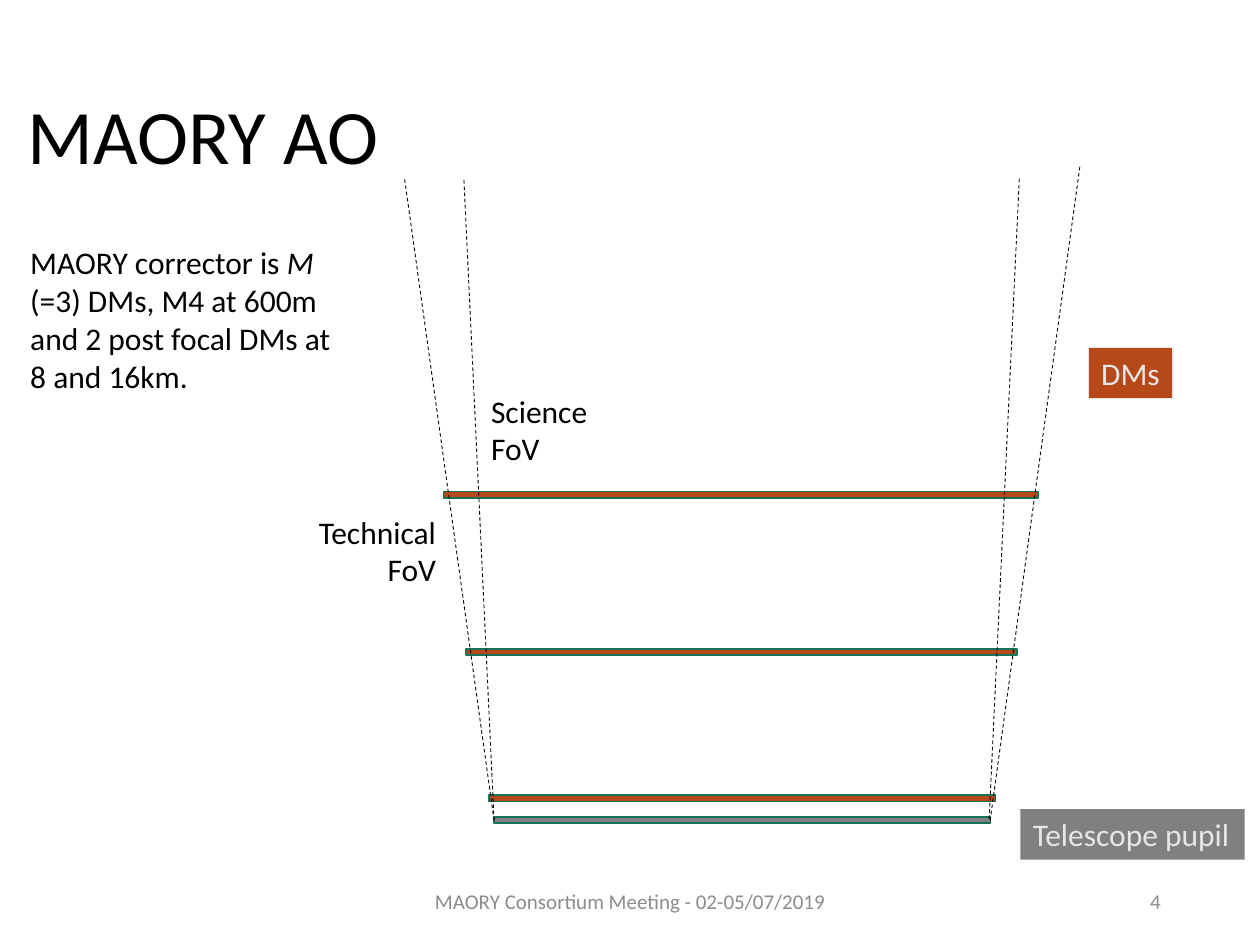
import pptx
import pptx.util
import pptx.dml.color
import pptx.enum.dml
import pptx.enum.shapes
import pptx.enum.text
import pptx.oxml.ns
import lxml.etree
from pptx.util import Cm

RGB = pptx.dml.color.RGBColor
BLACK = RGB(0x00, 0x00, 0x00)
GREY = RGB(0x80, 0x80, 0x80)
MUTED = RGB(0x8C, 0x8C, 0x8C)
PALE = RGB(0xE7, 0xE6, 0xE6)
RUST = RGB(0xB7, 0x49, 0x19)
GREEN = RGB(0x15, 0x72, 0x59)

ALIGN = pptx.enum.text.PP_ALIGN
ANCHOR = pptx.enum.text.MSO_ANCHOR
RECT = pptx.enum.shapes.MSO_SHAPE.RECTANGLE


def style(frame, size, color, align=ALIGN.LEFT):
    para = frame.paragraphs[0]
    para.alignment = align
    para.font.name = "Calibri"
    para.font.size = pptx.util.Pt(size)
    para.font.color.rgb = color


def block(left, top, width, height, fill, edge, weight):
    shape = slide.shapes.add_shape(RECT, Cm(left), Cm(top), Cm(width), Cm(height))
    shape.shadow.inherit = False
    shape.fill.solid()
    shape.fill.fore_color.rgb = fill
    if edge is None:
        shape.line.fill.background()
    else:
        shape.line.color.rgb = edge
        shape.line.width = pptx.util.Pt(weight)
    return shape


deck = pptx.Presentation()
deck.slide_width, deck.slide_height = Cm(25.4), Cm(19.05)
slide = deck.slides.add_slide(deck.slide_layouts[5])

# Title
title = slide.shapes.title
title.left, title.top, title.width, title.height = Cm(0.3), Cm(0.97), Cm(21.89), Cm(3.68)
title.text_frame.text = "MAORY AO"
title.text_frame.vertical_anchor = ANCHOR.MIDDLE
title.text_frame.paragraphs[0].line_spacing = 0.9
style(title.text_frame, 44, BLACK)

# Mirrors and telescope pupil
bars = [
    (9.4, 13.08, 11.1, RUST),
    (9.86, 16.03, 10.21, RUST),
    (8.94, 9.91, 11.99, RUST),
    (9.96, 16.47, 10.01, GREY),
]
for left, top, width, fill in bars:
    block(left, top, width, 0.13, fill, GREEN, 1)

# Edges of the technical and science fields
rays = [
    (9.96, 16.54, 8.15, 3.56),
    (19.96, 16.54, 21.77, 3.35),
    (9.96, 16.54, 9.35, 3.58),
    (19.94, 16.51, 20.55, 3.56),
]
for x1, y1, x2, y2 in rays:
    ray = slide.shapes.add_connector(
        pptx.enum.shapes.MSO_CONNECTOR.STRAIGHT, Cm(x1), Cm(y1), Cm(x2), Cm(y2))
    ray.line.color.rgb = BLACK
    ray.line.width = pptx.util.Pt(0.5)
    ray.line.dash_style = pptx.enum.dml.MSO_LINE.DASH
    lxml.etree.SubElement(ray._element.spPr, pptx.oxml.ns.qn("a:effectLst"))

# Filled labels
tags = [
    ("DMs", 21.95, 7.01, 1.7, RUST, PALE),
    ("Telescope pupil", 20.57, 16.31, 4.52, GREY, None),
]
for words, left, top, width, fill, edge in tags:
    tag = block(left, top, width, 1.02, fill, edge, 0.75)
    tag.text_frame.text = words
    tag.text_frame.word_wrap = False
    tag.text_frame.vertical_anchor = ANCHOR.TOP
    style(tag.text_frame, 18, PALE)

# Plain text: description, field names, footer and page number
notes = [
    (["MAORY corrector is ", "M", " (=3) DMs, M4 at 600m and 2 post focal DMs at 8 and 16km."],
     0.36, 4.78, 6.81, 3.33, 18, BLACK, ALIGN.LEFT, ANCHOR.TOP),
    (["Technical FoV"], 5.79, 10.21, 3.25, 1.8, 18, BLACK, ALIGN.RIGHT, ANCHOR.TOP),
    (["Science FoV"], 9.65, 7.77, 2.54, 1.8, 18, BLACK, ALIGN.LEFT, ANCHOR.TOP),
    (["MAORY Consortium Meeting - 02-05/07/2019"],
     8.41, 17.65, 8.59, 1.02, 12, MUTED, ALIGN.CENTER, ANCHOR.MIDDLE),
    (["4"], 17.93, 17.65, 5.72, 1.02, 12, MUTED, ALIGN.RIGHT, ANCHOR.MIDDLE),
]
for parts, left, top, width, height, size, color, align, anchor in notes:
    box = slide.shapes.add_textbox(Cm(left), Cm(top), Cm(width), Cm(height))
    frame = box.text_frame
    frame.word_wrap = True
    frame.vertical_anchor = anchor
    for part in parts:
        run = frame.paragraphs[0].add_run()
        run.text = part
        if part == "M":
            run.font.italic = True
    style(frame, size, color, align)

deck.save("out.pptx")
